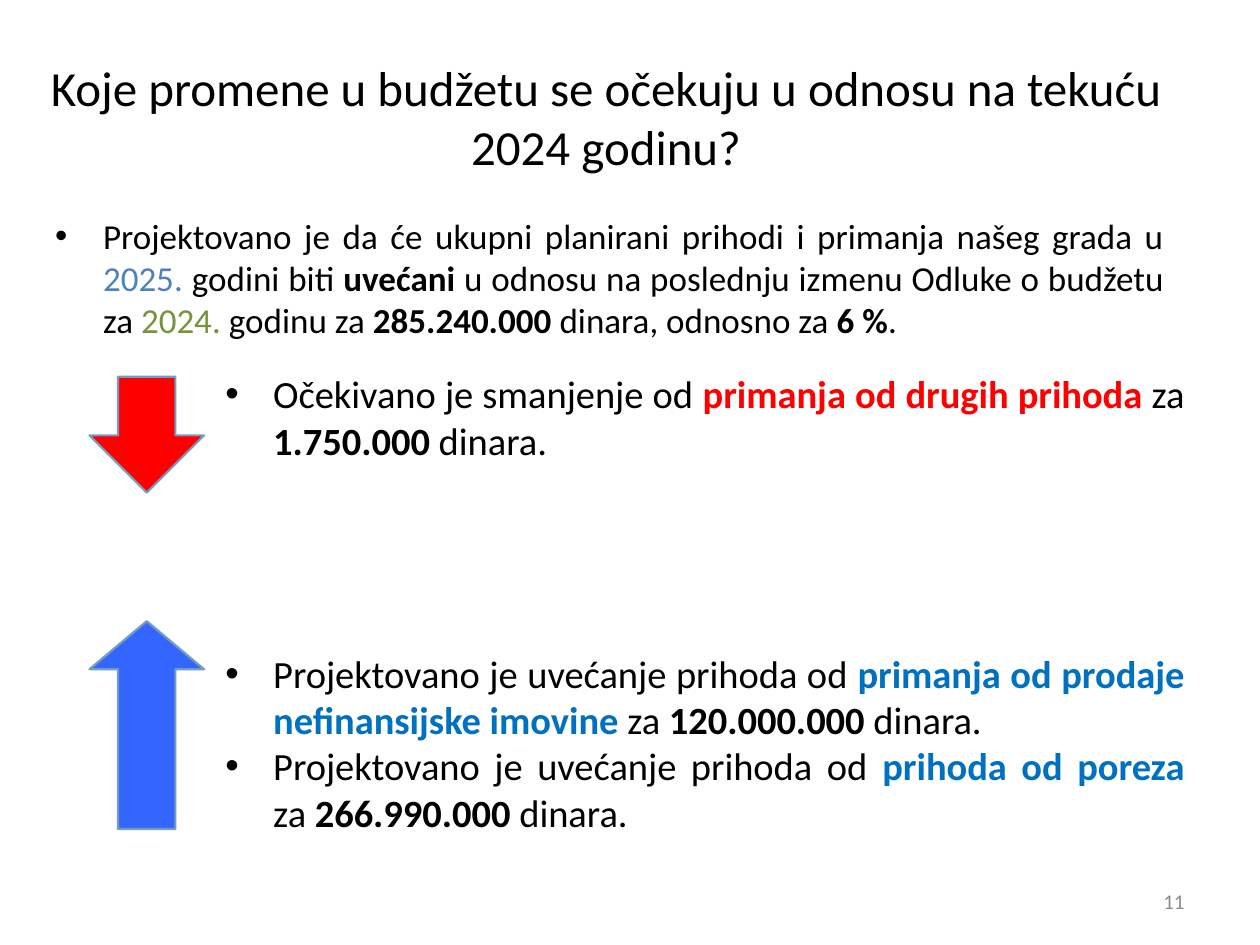
from lxml.etree import SubElement
from pptx import Presentation
from pptx.dml.color import RGBColor
from pptx.enum.shapes import MSO_SHAPE
from pptx.enum.text import MSO_ANCHOR, PP_ALIGN
from pptx.oxml.ns import qn
from pptx.util import Inches, Pt

COLORS = {
    "text": "000000",
    "next_year": "4F81BD",
    "current_year": "77933C",
    "decrease": "FF0000",
    "increase": "0070C0",
    "up_arrow": "3366FF",
    "arrow_line": "739CC3",
    "page_number": "8C8C8C",
}


def add_text(paragraph, text, size=22, color="text", bold=False):
    """Append one formatted run to a paragraph."""
    run = paragraph.add_run()
    run.text = text
    run.font.name = "Calibri"
    run.font.size = Pt(size)
    run.font.bold = bold
    run.font.color.rgb = RGBColor.from_string(COLORS[color])


def make_bullet(paragraph):
    """Give a paragraph a hanging round bullet."""
    properties = paragraph._p.get_or_add_pPr()
    properties.set("marL", str(Inches(0.38)))
    properties.set("indent", str(-Inches(0.38)))
    SubElement(properties, qn("a:buFont"), typeface="Arial")
    SubElement(properties, qn("a:buChar"), char="•")


def add_title(slide, box, text):
    """Place and format the title placeholder."""
    title = slide.shapes.title
    title.left, title.top, title.width, title.height = map(Inches, box)
    title.text_frame.vertical_anchor = MSO_ANCHOR.MIDDLE
    paragraph = title.text_frame.paragraphs[0]
    paragraph.alignment = PP_ALIGN.CENTER
    add_text(paragraph, text, size=28)


def add_bullets(slide, box, items, size=22):
    """Add justified bullets, each given as its space before and its runs."""
    frame = slide.shapes.add_textbox(*map(Inches, box)).text_frame
    frame.word_wrap = True
    for index, (space_before, runs) in enumerate(items):
        paragraph = frame.add_paragraph() if index else frame.paragraphs[0]
        paragraph.alignment = PP_ALIGN.JUSTIFY
        paragraph.space_before = Pt(space_before)
        make_bullet(paragraph)
        for text, style in runs:
            add_text(paragraph, text, size=size, **style)


def add_arrow(slide, box, kind, color, head):
    """Add a block arrow with the given head proportion."""
    arrow = slide.shapes.add_shape(kind, *map(Inches, box))
    arrow.adjustments[0] = 0.5
    arrow.adjustments[1] = head
    arrow.shadow.inherit = False
    arrow.fill.solid()
    arrow.fill.fore_color.rgb = RGBColor.from_string(COLORS[color])
    arrow.line.color.rgb = RGBColor.from_string(COLORS["arrow_line"])
    arrow.line.width = Pt(1.25)


def add_page_number(slide, box, text):
    """Add the page number at the right of its box."""
    frame = slide.shapes.add_textbox(*map(Inches, box)).text_frame
    frame.word_wrap = True
    frame.vertical_anchor = MSO_ANCHOR.MIDDLE
    paragraph = frame.paragraphs[0]
    paragraph.alignment = PP_ALIGN.RIGHT
    add_text(paragraph, text, size=12, color="page_number")


def change_runs(lead, source, amount, color):
    """Return the runs of a sentence about one change in revenue."""
    return [
        (lead, {}),
        (source, {"color": color, "bold": True}),
        (" za ", {}),
        (amount, {"bold": True}),
        (" dinara.", {}),
    ]


def build_slide(presentation):
    """Build the slide on expected budget changes."""
    slide = presentation.slides.add_slide(presentation.slide_layouts[5])
    add_title(slide, (0.28, 0.3, 9.06, 1.25),
              "Koje promene u budžetu se očekuju u odnosu na tekuću 2024 godinu?")
    summary = [
        ("Projektovano je da će ukupni planirani prihodi i primanja našeg grada u ", {}),
        ("2025. ", {"color": "next_year"}),
        ("godini biti ", {}),
        ("uvećani ", {"bold": True}),
        ("u odnosu na poslednju izmenu Odluke o budžetu za ", {}),
        ("2024. ", {"color": "current_year"}),
        ("godinu za ", {}),
        ("285.240.000 ", {"bold": True}),
        ("dinara, odnosno za ", {}),
        ("6 %", {"bold": True}),
        (".", {}),
    ]
    add_bullets(slide, (0.34, 1.65, 9, 1.24), [(4, summary)], size=20)
    add_page_number(slide, (7.17, 6.95, 2.33, 0.4), "11")
    increase = "Projektovano je uvećanje prihoda od "
    add_bullets(slide, (1.69, 2.89, 7.81, 3.85), [
        (0, change_runs("Očekivano je smanjenje od ", "primanja od drugih prihoda",
                        "1.750.000", "decrease")),
        (107, change_runs(increase, "primanja od prodaje nefinansijske imovine",
                          "120.000.000", "increase")),
        (0, change_runs(increase, "prihoda od poreza", "266.990.000", "increase")),
    ])
    add_arrow(slide, (0.71, 2.99, 0.91, 0.92), MSO_SHAPE.DOWN_ARROW, "decrease", 0.5)
    add_arrow(slide, (0.71, 4.93, 0.91, 1.65), MSO_SHAPE.UP_ARROW, "up_arrow", 0.42)


def main():
    """Create and save the presentation."""
    presentation = Presentation()
    presentation.slide_width = Inches(10)
    presentation.slide_height = Inches(7.5)
    build_slide(presentation)
    presentation.save("out.pptx")


if __name__ == "__main__":
    main()
